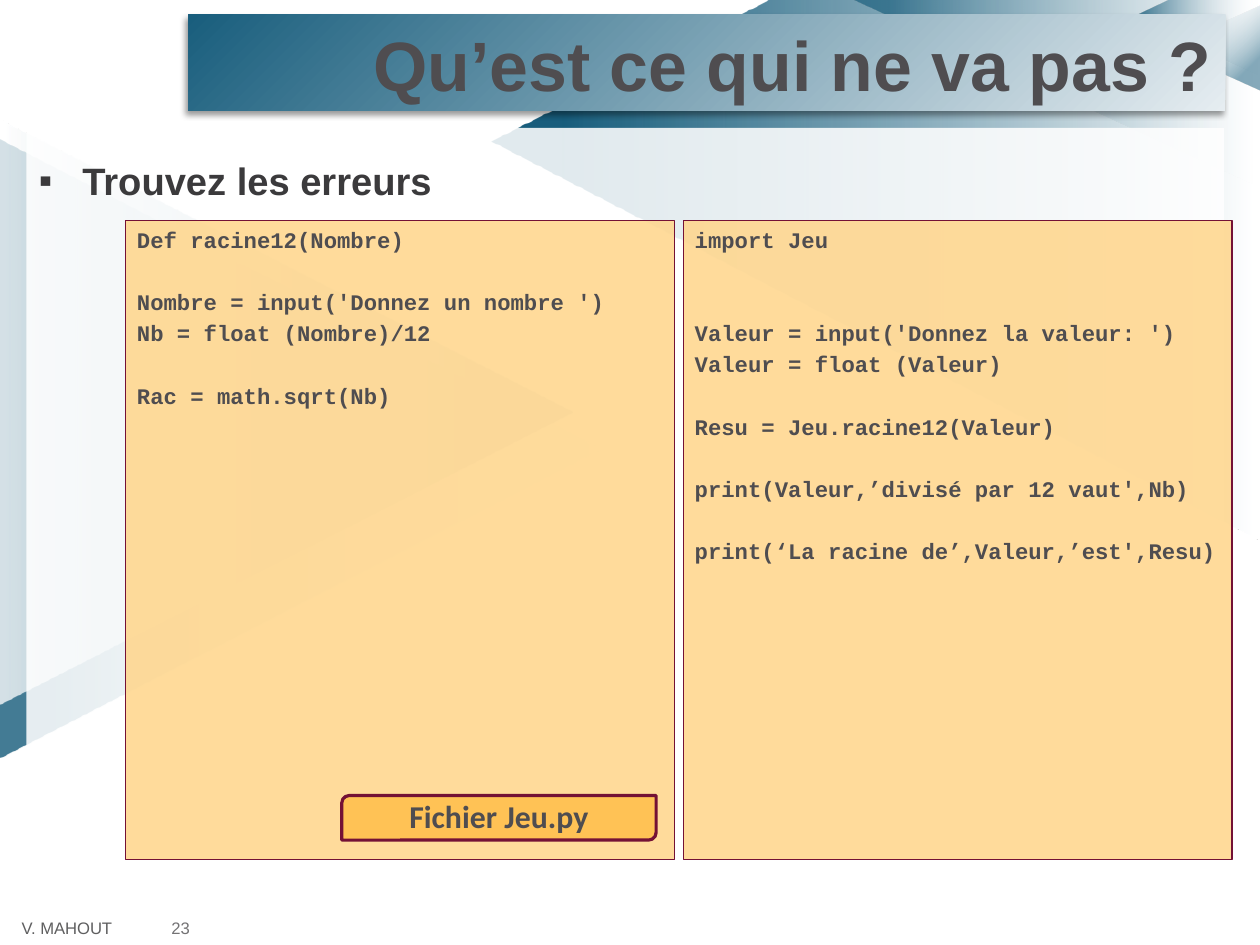
from dataclasses import dataclass

from lxml import etree
from pptx import Presentation
from pptx.dml.color import RGBColor
from pptx.enum.shapes import MSO_SHAPE
from pptx.enum.text import MSO_ANCHOR, MSO_AUTO_SIZE, PP_ALIGN
from pptx.oxml import parse_xml
from pptx.oxml.ns import nsdecls, qn
from pptx.util import Cm, Inches, Pt

RECT = MSO_SHAPE.RECTANGLE
TRIANGLE = MSO_SHAPE.ISOSCELES_TRIANGLE
DIAGONAL = MSO_SHAPE.ROUND_2_DIAG_RECTANGLE
TOP, MIDDLE = MSO_ANCHOR.TOP, MSO_ANCHOR.MIDDLE
LEFT, CENTER, RIGHT = PP_ALIGN.LEFT, PP_ALIGN.CENTER, PP_ALIGN.RIGHT
NO_AUTOFIT = MSO_AUTO_SIZE.NONE
WHITE, BLUE, PLUM, TEXT = "FFFFFF", "004D6F", "741135", "4F4D50"
CODE_PITCH, CODE_GAP = 19.6, 2.8


@dataclass
class Stop:
    pos: int
    color: str
    alpha: int = 100


@dataclass
class Triangle:
    box: tuple[float, float, float, float]
    rotation: int
    stops: tuple[Stop, Stop]
    angle: int


@dataclass
class Band:
    points: list[tuple[float, float]]
    stops: tuple[Stop, Stop]


@dataclass
class CodeBox:
    left: float
    lines: list[tuple[int, str]]


TRIANGLES = [
    Triangle((-0.08, 1.3, 5.41, 5.25), 90, (Stop(1, WHITE, 20), Stop(91, BLUE, 73)), 90),
    Triangle((-0.06, 1.1, 5.12, 5.01), 90, (Stop(1, WHITE, 77), Stop(91, BLUE, 83)), 270),
]
CORNER = Triangle((10.24, 0.01, 0.75, 0.82), 270, (Stop(27, WHITE, 0), Stop(81, BLUE, 48)), 135)
BANDS = [
    Band([(11.01, 4.72), (4.3, 1.24), (6.74, 0), (11.02, 0)], (Stop(1, WHITE), Stop(91, BLUE, 90))),
    Band([(10.99, 1.62), (7.46, 0), (11, 0)], (Stop(1, WHITE, 0), Stop(91, BLUE, 53))),
    Band([(11.02, 0.66), (9.92, 0.15), (10.24, 0), (11.02, 0)], (Stop(1, WHITE, 0), Stop(91, BLUE, 63))),
]
CODE_BOXES = [
    CodeBox(5.98, [
        (0, "import Jeu"),
        (2, "Valeur = input('Donnez la valeur: ')"),
        (0, "Valeur = float (Valeur)"),
        (1, "Resu = Jeu.racine12(Valeur)"),
        (1, "print(Valeur,’divisé par 12 vaut',Nb)"),
        (1, "print(‘La racine de’,Valeur,’est',Resu)"),
    ]),
    CodeBox(1.1, [
        (0, "Def racine12(Nombre)"),
        (1, "Nombre = input('Donnez un nombre ')"),
        (0, "Nb = float (Nombre)/12"),
        (1, "Rac = math.sqrt(Nb)"),
    ]),
]


def rgb(color: str) -> RGBColor:
    return RGBColor.from_string(color)


def set_fill(sp, color: str, alpha: int = 100) -> None:
    sp.fill.solid()
    sp.fill.fore_color.rgb = rgb(color)
    if alpha < 100:
        clr = sp._element.spPr.find(qn("a:solidFill"))[0]
        etree.SubElement(clr, qn("a:alpha"), val=str(alpha * 1000))


def set_gradient(sp, stops: tuple[Stop, Stop], direction: str) -> None:
    sp.fill.solid()
    spPr = sp._element.spPr
    gs = "".join(
        f'<a:gs pos="{stop.pos * 1000}"><a:srgbClr val="{stop.color}">'
        f'<a:alpha val="{stop.alpha * 1000}"/></a:srgbClr></a:gs>' for stop in stops)
    grad = parse_xml(f'<a:gradFill {nsdecls("a")} rotWithShape="1"><a:gsLst>{gs}</a:gsLst>{direction}</a:gradFill>')
    spPr.replace(spPr.find(qn("a:solidFill")), grad)


def linear(angle: int) -> str:
    return f'<a:lin ang="{angle * 60000}" scaled="0"/>'


def set_line(sp, color: str = "", width: float = 0) -> None:
    if color:
        sp.line.color.rgb = rgb(color)
        sp.line.width = Pt(width)
    else:
        sp.line.fill.background()


def place(sp, box: tuple[float, float, float, float]) -> None:
    sp.left, sp.top, sp.width, sp.height = (Inches(v) for v in box)


def add_box(s, kind, box: tuple[float, float, float, float]):
    sp = s.shapes.add_shape(kind, *(Inches(v) for v in box))
    sp.shadow.inherit = False
    return sp


def add_triangle(s, item: Triangle) -> None:
    sp = add_box(s, TRIANGLE, item.box)
    sp.rotation = item.rotation
    set_gradient(sp, item.stops, linear(item.angle))
    set_line(sp)


def add_band(s, band: Band) -> None:
    points = [(Inches(x), Inches(y)) for x, y in band.points]
    builder = s.shapes.build_freeform(*points[0])
    builder.add_line_segments(points[1:], close=True)
    sp = builder.convert_to_shape()
    sp.shadow.inherit = False
    set_gradient(sp, band.stops, linear(180))
    set_line(sp)


def set_frame(sp, anchor, insets: tuple[float, float, float, float]):
    tf = sp.text_frame
    tf.word_wrap = True
    tf.auto_size = NO_AUTOFIT
    tf.vertical_anchor = anchor
    tf.margin_left, tf.margin_top, tf.margin_right, tf.margin_bottom = (Inches(v) for v in insets)
    return tf


def add_run(p, text: str, size: float, color: str, font: str = "Arial", bold: bool = True) -> None:
    r = p.add_run()
    r.text = text
    r.font.size, r.font.name, r.font.bold = Pt(size), font, bold
    r.font.color.rgb = rgb(color)


def add_footer(s) -> None:
    sp = add_box(s, RECT, (0.08, 7.99, 1.81, 0.28))
    set_fill(sp, WHITE)
    set_line(sp)
    p = set_frame(sp, MIDDLE, (0.11, 0.06, 0.11, 0.06)).paragraphs[0]
    p.alignment, p.line_spacing = LEFT, 0.93
    tabs = etree.SubElement(p._p.get_or_add_pPr(), qn("a:tabLst"))
    etree.SubElement(tabs, qn("a:tab"), pos=str(Inches(1.31)), algn="l")
    add_run(p, "V. MAHOUT\t", 10.5, "5F5F60", bold=False)
    add_run(p, "23", 10.5, "747375", bold=False)


def add_panel(s) -> None:
    sp = add_box(s, RECT, (0.23, 1.12, 10.48, 6.36))
    set_fill(sp, WHITE, 87)
    set_line(sp)
    p = set_frame(sp, TOP, (0.11, 0.06, 0.11, 0.06)).paragraphs[0]
    p.alignment, p.line_spacing = LEFT, 1.5
    pPr = p._p.get_or_add_pPr()
    pPr.set("marL", str(Inches(0.38)))
    pPr.set("indent", str(Inches(-0.38)))
    etree.SubElement(pPr, qn("a:buFont"), typeface="Arial")
    etree.SubElement(pPr, qn("a:buChar"), char="▪")
    add_run(p, "Trouvez les erreurs", 24, "3B3A3C")


def format_title(s) -> None:
    sp = s.shapes.title
    s.shapes._spTree.append(sp._element)
    place(sp, (1.65, 0.13, 9.07, 0.84))
    set_gradient(sp, (Stop(0, "195E7D"), Stop(100, "E6EDF1")),
                 '<a:path path="circle"><a:fillToRect r="100000" b="100000"/></a:path>')
    set_line(sp)
    sp.shadow.inherit = False
    sp._element.spPr.find(qn("a:effectLst")).append(parse_xml(
        f'<a:outerShdw {nsdecls("a")} blurRad="{Pt(4)}" dist="{Pt(3)}" dir="{135 * 60000}" algn="tr" '
        'rotWithShape="0"><a:srgbClr val="000000"><a:alpha val="40000"/></a:srgbClr></a:outerShdw>'))
    p = set_frame(sp, TOP, (0.11, 0.06, 0.11, 0.06)).paragraphs[0]
    p.alignment, p.line_spacing = RIGHT, 1.0
    add_run(p, "Qu’est ce qui ne va pas ?", 44, TEXT)


def add_code(s, code: CodeBox) -> None:
    sp = add_box(s, RECT, (code.left, 1.93, 4.8, 5.59))
    set_fill(sp, "FFD68D", 87)
    set_line(sp, PLUM, 0.75)
    tf = set_frame(sp, TOP, (0.1, 0.05, 0.1, 0.05))
    for i, (gap, line) in enumerate(code.lines):
        p = tf.add_paragraph() if i else tf.paragraphs[0]
        p.alignment = LEFT
        if i:
            p.space_before = Pt(CODE_GAP + gap * CODE_PITCH)
        add_run(p, line, 14, TEXT, "Courier New")


def add_file_label(s) -> None:
    sp = add_box(s, DIAGONAL, (2.99, 6.96, 2.75, 0.39))
    set_fill(sp, "FFC255")
    set_line(sp, PLUM, 2)
    p = set_frame(sp, MIDDLE, (0.1, 0.05, 0.1, 0.05)).paragraphs[0]
    p.alignment, p.line_spacing = CENTER, 0.93
    add_run(p, "Fichier Jeu.py", 20, TEXT, "Calibri")


def main() -> None:
    prs = Presentation()
    prs.slide_width, prs.slide_height = Cm(28), Cm(21)
    s = prs.slides.add_slide(prs.slide_layouts[5])
    for item in TRIANGLES:
        add_triangle(s, item)
    for band in BANDS:
        add_band(s, band)
    add_triangle(s, CORNER)
    add_footer(s)
    add_panel(s)
    format_title(s)
    for code in CODE_BOXES:
        add_code(s, code)
    add_file_label(s)
    prs.save("out.pptx")


if __name__ == "__main__":
    main()
